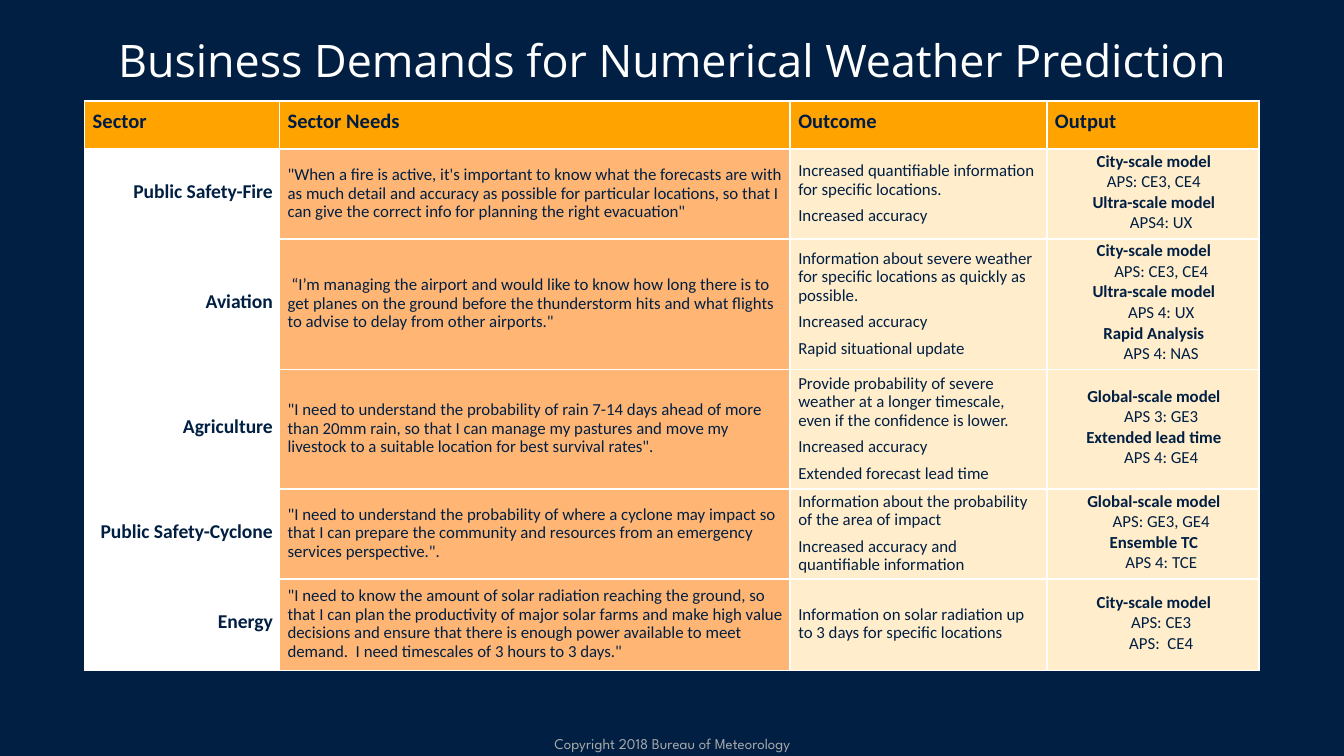
"""Build the slide on business demands for numerical weather prediction."""
from dataclasses import dataclass
from typing import Any

from lxml import etree
from pptx import Presentation
from pptx.dml.color import RGBColor
from pptx.enum import text
from pptx.oxml import ns
from pptx.util import Inches, Pt


@dataclass(frozen=True)
class Theme:
    """Colours, fonts and type sizes."""
    navy: str = "001F42"
    header_ink: str = "001C43"
    white: str = "FFFFFF"
    grey: str = "A7A9AB"
    amber: str = "FFA300"
    orange: str = "FFB574"
    cream: str = "FFEDCC"
    body_font: str = "Calibri"
    title_font: str = "Open Sans"
    footer_font: str = "League Spartan"
    title_size: float = 24
    header_size: float = 11
    sector_size: float = 10.5
    body_size: float = 9
    footer_size: float = 8


@dataclass(frozen=True)
class Output:
    """A model and the system codes listed below it."""
    model: str
    codes: tuple[str, ...]
    indent: float = 0.11


@dataclass(frozen=True)
class Demand:
    """One table row with its height in inches."""
    sector: str
    need: str
    outcomes: tuple[str, ...]
    outputs: tuple[Output, ...]
    height: float


T = Theme()
HEADERS = ("Sector", "Sector Needs", "Outcome", "Output")
WIDTHS = (1.45, 3.8, 1.91, 1.58)
HEADER_HEIGHT = 0.36
LEFT, CENTER, RIGHT = text.PP_ALIGN.LEFT, text.PP_ALIGN.CENTER, text.PP_ALIGN.RIGHT
DEMANDS = (
    Demand(
        "Public Safety-Fire",
        "\"When a fire is active, it's important to know what the forecasts are with as much "
        "detail and accuracy as possible for particular locations, so that I can give the "
        "correct info for planning the right evacuation\"",
        ("Increased quantifiable information for specific locations.", "Increased accuracy"),
        (Output("City-scale model", ("APS: CE3, CE4",), indent=0),
         Output("Ultra-scale model", ("APS4: UX",))),
        0.67),
    Demand(
        "Aviation",
        " “I’m managing the airport and would like to know how long there is to get planes on "
        "the ground before the thunderstorm hits and what flights to advise to delay from "
        "other airports.\"",
        ("Information about severe weather for specific locations as quickly as possible.",
         "Increased accuracy", "Rapid situational update"),
        (Output("City-scale model", ("APS: CE3, CE4",)),
         Output("Ultra-scale model", ("APS 4: UX",)),
         Output("Rapid Analysis", ("APS 4: NAS",))),
        0.97),
    Demand(
        "Agriculture",
        "\"I need to understand the probability of rain 7-14 days ahead of more than 20mm rain, "
        "so that I can manage my pastures and move my livestock to a suitable location for "
        "best survival rates\".",
        ("Provide probability of severe weather at a longer timescale, even if the confidence "
         "is lower.", "Increased accuracy", "Extended forecast lead time"),
        (Output("Global-scale model", ("APS 3: GE3",)),
         Output("Extended lead time", ("APS 4: GE4",))),
        0.89),
    Demand(
        "Public Safety-Cyclone",
        "\"I need to understand the probability of where a cyclone may impact so that I can "
        "prepare the community and resources from an emergency services perspective.\".",
        ("Information about the probability of the area of impact",
         "Increased accuracy and quantifiable information"),
        (Output("Global-scale model", ("APS: GE3, GE4",)),
         Output("Ensemble TC", ("APS 4: TCE",))),
        0.67),
    Demand(
        "Energy",
        "\"I need to know the amount of solar radiation reaching the ground, so that I can plan "
        "the productivity of major solar farms and make high value decisions and ensure that "
        "there is enough power available to meet demand.  I need timescales of 3 hours to "
        "3 days.\"",
        ("Information on solar radiation up to 3 days for specific locations",),
        (Output("City-scale model", ("APS: CE3", "APS:  CE4")),),
        0.68),
)


def write(tf: Any, content: str, *, size: float = T.body_size, font: str = T.body_font,
          color: str = T.navy, bold: bool = False, align: Any = LEFT,
          line: float | None = None, gap: float = 0, indent: float = 0) -> None:
    """Fill the empty first paragraph, or add one, with formatted text."""
    first = not tf.text
    p = tf.paragraphs[0] if first else tf.add_paragraph()
    p.alignment = align
    p.space_before, p.space_after = Pt(0 if first else gap), Pt(gap)
    if line:
        p.line_spacing = Pt(line)
    if indent:
        p._p.get_or_add_pPr().set("marL", str(Inches(indent)))
    r = p.add_run()
    r.text = content
    r.font.size, r.font.name, r.font.bold = Pt(size), font, bold
    r.font.color.rgb = RGBColor.from_string(color)


def style_cell(cell: Any, fill: str) -> Any:
    """Set fill, margins and white borders, and return the text frame."""
    cell.fill.solid()
    cell.fill.fore_color.rgb = RGBColor.from_string(fill)
    cell.margin_left, cell.margin_right = Inches(0.06), Inches(0.05)
    cell.margin_top = cell.margin_bottom = 0
    cell.vertical_anchor = text.MSO_ANCHOR.MIDDLE
    tc_pr = cell._tc.get_or_add_tcPr()
    for i, side in enumerate(("lnL", "lnR", "lnT", "lnB")):
        ln = etree.Element(ns.qn(f"a:{side}"), w=str(Pt(1)))
        solid = etree.SubElement(ln, ns.qn("a:solidFill"))
        etree.SubElement(solid, ns.qn("a:srgbClr"), val=T.white)
        tc_pr.insert(i, ln)
    return cell.text_frame


def fill_row(cells: Any, demand: Demand) -> None:
    """Write one demand across the four columns."""
    fills = (T.white, T.orange, T.cream, T.cream)
    sector, need, outcome, output = map(style_cell, cells, fills)
    write(sector, demand.sector, size=T.sector_size, bold=True, align=RIGHT, line=10, gap=2)
    write(need, demand.need, line=10, gap=2)
    for item in demand.outcomes:
        write(outcome, item, line=10, gap=2)
    for item in demand.outputs:
        write(output, item.model, bold=True, align=CENTER, line=9, gap=1)
        for code in item.codes:
            write(output, code, align=CENTER, line=9, gap=1, indent=item.indent)


def add_demand_table(s: Any) -> None:
    """Add the table of sectors, needs, outcomes and outputs."""
    heights = (HEADER_HEIGHT, *(d.height for d in DEMANDS))
    table = s.shapes.add_table(len(heights), len(WIDTHS), Inches(0.63), Inches(0.75),
                               Inches(sum(WIDTHS)), Inches(sum(heights))).table
    table.horz_banding = False
    for column, width in zip(table.columns, WIDTHS):
        column.width = Inches(width)
    for row, height in zip(table.rows, heights):
        row.height = Inches(height)
    for cell, header in zip(table.rows[0].cells, HEADERS):
        write(style_cell(cell, T.amber), header, size=T.header_size, color=T.header_ink,
              bold=True, line=10, gap=2)
    for i, demand in enumerate(DEMANDS, 1):
        fill_row(table.rows[i].cells, demand)


def main() -> None:
    """Build and save the slide."""
    prs = Presentation()
    prs.slide_width, prs.slide_height = Inches(10), Inches(10 * 9 / 16)
    s = prs.slides.add_slide(prs.slide_layouts[5])
    s.background.fill.solid()
    s.background.fill.fore_color.rgb = RGBColor.from_string(T.navy)

    title = s.shapes.title
    title.left, title.top, title.width, title.height = map(Inches, (0.39, 0.24, 9.22, 0.59))
    tf = title.text_frame
    tf.margin_left = tf.margin_right = tf.margin_top = tf.margin_bottom = 0
    tf.vertical_anchor = text.MSO_ANCHOR.TOP
    write(tf, "Business Demands for Numerical Weather Prediction", size=T.title_size,
          font=T.title_font, color=T.white, align=CENTER)

    footer = s.shapes.add_textbox(*map(Inches, (3.42, 5.44, 3.17, 0.19))).text_frame
    footer.word_wrap = True
    footer.vertical_anchor = text.MSO_ANCHOR.MIDDLE
    write(footer, "Copyright 2018 Bureau of Meteorology", size=T.footer_size,
          font=T.footer_font, color=T.grey, align=CENTER)

    add_demand_table(s)
    prs.save("out.pptx")


if __name__ == "__main__":
    main()
